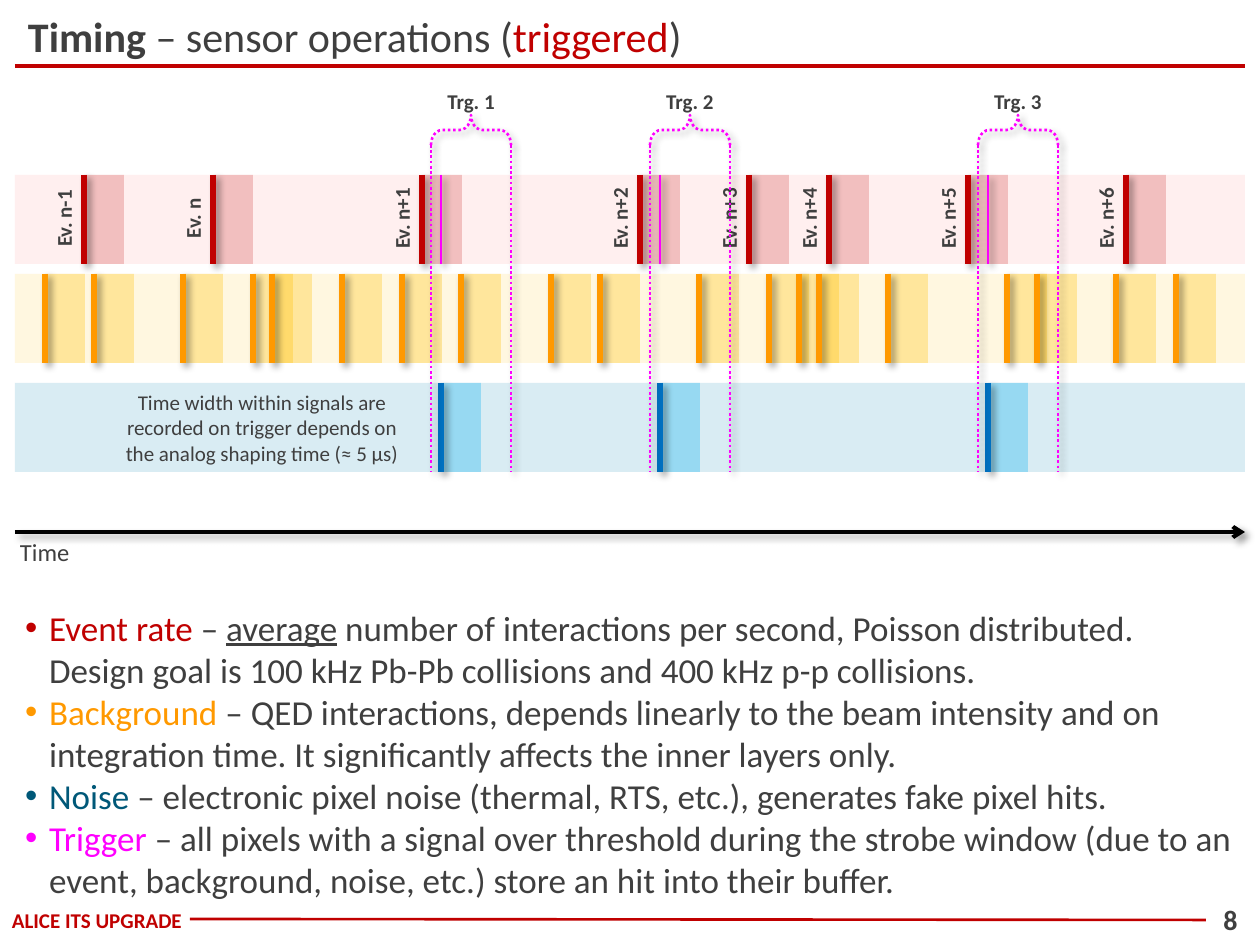
"""Build the slide on sensor timing in triggered operation."""
from lxml import etree
from pptx import Presentation, util as u
from pptx.dml.color import RGBColor
from pptx.enum import dml, shapes, text
from pptx.oxml import parse_xml
from pptx.oxml.ns import nsdecls, qn

PX = 914400 // 126
C = {"red": "C00000", "dark": "3F3F3F", "orange": "FF9900", "teal": "005878",
     "magenta": "FF00FF", "black": "000000", "blue": "0070C0", "pink": "FFCCCC",
     "cream": "FFE699", "amber": "FFC000", "ice": "0084B4", "sky": "00B0F0"}
RGB = {name: RGBColor.from_string(value) for name, value in C.items()}
SHADOW = (f'<a:effectLst {nsdecls("a")}><a:outerShdw blurRad="50800" dist="38100" '
          'dir="2700000" algn="tl" rotWithShape="0"><a:srgbClr val="000000">'
          '<a:alpha val="40000"/></a:srgbClr></a:outerShdw></a:effectLst>')
NO_SHADOW = f'<a:effectLst {nsdecls("a")}/>'

prs = Presentation()
prs.slide_width, prs.slide_height = u.Inches(10), u.Inches(7.5)
s = prs.slides.add_slide(prs.slide_layouts[1])


def outline(sp, color, width, dotted=False, shadow=True):
    sp.line.color.rgb = RGB[color]
    sp.line.width = u.Pt(width)
    if dotted:
        sp.line.dash_style = dml.MSO_LINE.ROUND_DOT
    sp._element.spPr.append(parse_xml(SHADOW if shadow else NO_SHADOW))


def add_line(x1, y1, x2, y2, color, width, dotted=False, shadow=True):
    line = s.shapes.add_connector(shapes.MSO_CONNECTOR.STRAIGHT,
                                  x1 * PX, y1 * PX, x2 * PX, y2 * PX)
    outline(line, color, width, dotted, shadow)
    return line


add_line(15, 66, 1245, 66, "red", 2.25, shadow=False)
add_line(1206, 920, 190, 919, "red", 1.5, shadow=False)

title_runs = [("Timing ", "dark"), ("– sensor operations (", "dark"),
              ("triggered", "red"), (")", "dark")]
bullets = [
    [("Event rate ", "red"), ("– ", "dark"), ("average", "dark"),
     (" number of interactions per second, Poisson distributed. Design goal is "
      "100 kHz Pb-Pb collisions and 400 kHz p-p collisions.", "dark")],
    [("Background", "orange"),
     (" – QED interactions, depends linearly to the beam intensity and on "
      "integration time. It significantly affects the inner layers only.", "dark")],
    [("Noise", "teal"),
     (" – electronic pixel noise (thermal, RTS, etc.), generates fake pixel hits.",
      "dark")],
    [("Trigger", "magenta"),
     (" – all pixels with a signal over threshold during the strobe window (due to "
      "an event, background, noise, etc.) store an hit into their buffer.", "dark")],
]
title, body = s.shapes.title, s.placeholders[1]
for sp, top, height, inset, size, anchor, paragraphs in (
        (title, 6, 60, 13, 24, text.MSO_ANCHOR.MIDDLE, [title_runs]),
        (body, 601, 308, 10, 20, text.MSO_ANCHOR.TOP, bullets)):
    sp.left, sp.top, sp.width, sp.height = 15 * PX, top * PX, 1230 * PX, height * PX
    tf = sp.text_frame
    tf.word_wrap, tf.auto_size = True, text.MSO_AUTO_SIZE.NONE
    tf.vertical_anchor = anchor
    tf.margin_left = tf.margin_right = inset * PX
    tf.margin_top = tf.margin_bottom = 5 * PX
    for i, runs in enumerate(paragraphs):
        p = tf.add_paragraph() if i else tf.paragraphs[0]
        p.alignment = text.PP_ALIGN.LEFT
        p.space_before = u.Pt(0)
        if sp is body:
            pPr = p._p.get_or_add_pPr()
            pPr.set("marL", str(24 * PX))
            pPr.set("indent", str(-24 * PX))
        p.font.name, p.font.size = "Calibri", u.Pt(size)
        for words, color in runs:
            r = p.add_run()
            r.text = words
            r.font.color.rgb = RGB[color]
title.text_frame.paragraphs[0].runs[0].font.bold = True
body.text_frame.paragraphs[0].runs[2].font.underline = True

time_axis = add_line(15, 532, 1245, 532, "black", 2.25)
etree.SubElement(time_axis.line._get_or_add_ln(), qn("a:tailEnd"), type="arrow")

events = {"n-1": 84, "n": 213, "n+1": 422, "n+2": 640, "n+3": 749, "n+4": 829,
          "n+5": 968, "n+6": 1126}
background = [45, 94, 183, 253, 272, 342, 402, 461, 551, 600, 699, 769, 799, 819,
              888, 1007, 1037, 1116, 1176]
triggers = [441, 660, 988]
rows = [(175, "pink", 30, "red", 20, "red", events.values()),
        (274, "cream", 30, "amber", 30, "orange", background),
        (383, "ice", 15, "sky", 30, "blue", triggers)]
for y, band, band_alpha, window, window_alpha, mark, starts in rows:
    boxes = [(15, 1230, band, band_alpha)]
    boxes += [(x, 40, window, window_alpha) for x in starts]
    for x, width, color, alpha in boxes:
        sp = s.shapes.add_shape(shapes.MSO_SHAPE.RECTANGLE,
                                x * PX, y * PX, width * PX, 89 * PX)
        sp.shadow.inherit = False
        sp.line.fill.background()
        sp.fill.solid()
        sp.fill.fore_color.rgb = RGB[color]
        clr = sp._element.spPr.find(qn("a:solidFill"))[0]
        etree.SubElement(clr, qn("a:alpha"), val=str(alpha * 1000))
        if color == window:
            add_line(x, y, x, y + 89, mark, 3)

LEFT, CENTER = text.PP_ALIGN.LEFT, text.PP_ALIGN.CENTER
labels = [(2, 910, 190, 20, 0, "ALICE ITS UPGRADE", 12, True, "red", CENTER, 0),
          (1206, 900, 49, 39, 5, "8", 16, True, "dark", CENTER, 0),
          (15, 532, 126, 39, 5, "Time", 14, False, "dark", LEFT, 0),
          (113, 383, 298, 89, 5, "Time width within signals are recorded on trigger "
           "depends on the analog shaping time (≈ 5 µs)", 12, False, "dark", CENTER, 0)]
labels += [(x - 65, 199, 89, 39, 5, f"Ev. {name}", 12, True, "dark", CENTER, 270)
           for name, x in events.items()]
labels += [(x - 20, 86, 100, 30, 5, f"Trg. {n}", 12, True, "dark", CENTER, 0)
           for n, x in enumerate(triggers, 1)]
for x, y, w, h, inset, words, size, bold, color, align, angle in labels:
    sp = s.shapes.add_textbox(x * PX, y * PX, w * PX, h * PX)
    sp.rotation = angle
    tf = sp.text_frame
    tf.word_wrap = True
    tf.vertical_anchor = text.MSO_ANCHOR.MIDDLE
    tf.margin_left = tf.margin_right = tf.margin_top = tf.margin_bottom = inset * PX
    p = tf.paragraphs[0]
    p.text = words
    p.alignment = align
    p.font.name, p.font.size, p.font.bold = "Calibri", u.Pt(size), bold
    p.font.color.rgb = RGB[color]

for x in triggers:
    add_line(x, 175, x, 264, "magenta", 1.5)
    for edge in (x + 70, x - 10):
        add_line(edge, 145, edge, 472, "magenta", 1.5, dotted=True)
    brace = s.shapes.add_shape(shapes.MSO_SHAPE.LEFT_BRACE,
                               (x + 15) * PX, 90 * PX, 30 * PX, 80 * PX)
    brace.rotation = 90
    brace.adjustments[0] = 0.37
    brace.fill.background()
    outline(brace, "magenta", 1.5, dotted=True)

prs.save("out.pptx")
